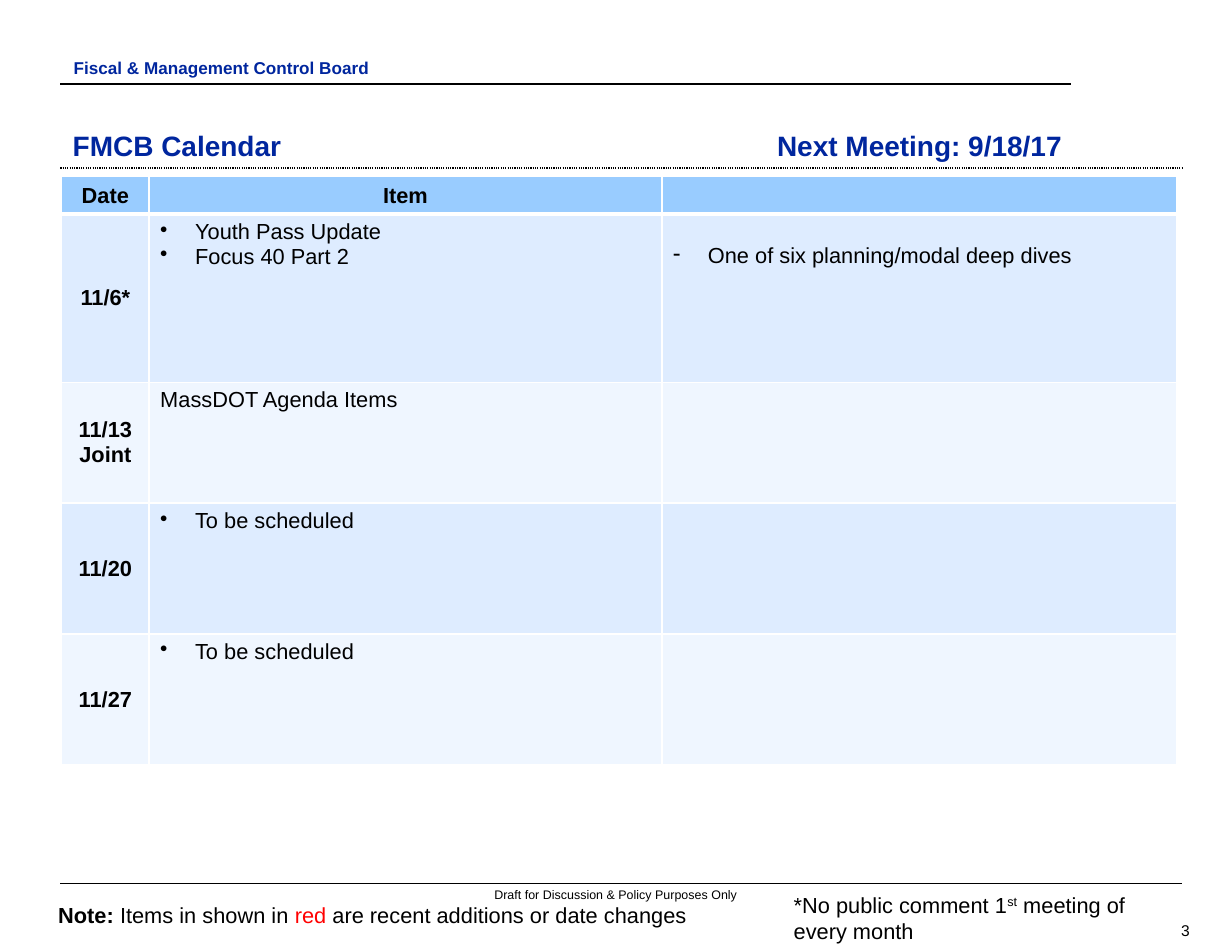
from lxml import etree
from pptx import Presentation
from pptx.dml.color import RGBColor
from pptx.enum import dml, shapes, text
from pptx.oxml import parse_xml
from pptx.oxml.ns import nsdecls, qn
from pptx.util import Cm, Pt

BLACK = RGBColor(0x00, 0x00, 0x00)
NAVY = RGBColor(0x00, 0x26, 0x9E)
RED = RGBColor(0xFF, 0x00, 0x00)
HEADER = RGBColor(0x99, 0xCC, 0xFF)
BAND_DARK = RGBColor(0xDE, 0xEC, 0xFF)
BAND_LIGHT = RGBColor(0xEF, 0xF6, 0xFF)
LEFT, CENTER, RIGHT = text.PP_ALIGN.LEFT, text.PP_ALIGN.CENTER, text.PP_ALIGN.RIGHT
TOP, MIDDLE, BOTTOM = text.MSO_ANCHOR.TOP, text.MSO_ANCHOR.MIDDLE, text.MSO_ANCHOR.BOTTOM

prs = Presentation()
prs.slide_width, prs.slide_height = Cm(27.94), Cm(21.59)
s = prs.slides.add_slide(prs.slide_layouts[6])


def style(r, size, color, bold):
    r.font.name = "Arial"
    r.font.size = Pt(size)
    r.font.color.rgb = color
    r.font.bold = bold


def add_text(box, runs, size, align=LEFT, anchor=TOP, wrap=True):
    tf = s.shapes.add_textbox(*[Cm(v) for v in box]).text_frame
    tf.word_wrap = wrap
    tf.vertical_anchor = anchor
    p = tf.paragraphs[0]
    p.alignment = align
    for words, color, bold in runs:
        r = p.add_run()
        r.text = words
        style(r, size, color, bold)
    return tf


for y, right, width, dash in [
    (1.9, 24.28, 1, None),
    (3.81, 26.8, 0.75, dml.MSO_LINE.ROUND_DOT),
    (20.04, 26.8, 0.75, None),
]:
    sp = s.shapes.add_connector(shapes.MSO_CONNECTOR.STRAIGHT, Cm(1.37), Cm(y), Cm(right), Cm(y))
    sp.line.color.rgb = BLACK
    sp.line.width = Pt(width)
    if dash:
        sp.line.dash_style = dash
    etree.SubElement(sp._element.spPr, qn("a:effectLst"))

add_text((24.89, 20.75, 2.34, 0.71), [("3", BLACK, False)], 10, RIGHT, MIDDLE)
tf = add_text((9.98, 20.12, 7.98, 0.33),
              [("Draft for Discussion & Policy Purposes Only", BLACK, False)], 8, CENTER)
tf.margin_left = tf.margin_right = tf.margin_top = tf.margin_bottom = 0

rows = [
    (0.84, "Date", "Item", "", None),
    (3.81, "11/6*", "Youth Pass Update\nFocus 40 Part 2", "One of six planning/modal deep dives", "•"),
    (2.74, "11/13 Joint", "MassDOT Agenda Items", "", None),
    (2.97, "11/20", "To be scheduled", "", "•"),
    (2.97, "11/27", "To be scheduled", "", "•"),
]
columns = [1.98, 11.63, 11.68]
table = s.shapes.add_table(len(rows), len(columns), Cm(1.4), Cm(4.01),
                           Cm(sum(columns)), Cm(sum(row[0] for row in rows))).table
for i, width in enumerate(columns):
    table.columns[i].width = Cm(width)

for i, (height, *words, bullet) in enumerate(rows):
    table.rows[i].height = Cm(height)
    for j, content in enumerate(words):
        cell = table.cell(i, j)
        heading = i == 0 or j == 0
        for side in "LRTB":
            thick = (i, side) in [(0, "B"), (1, "T")]
            cell._tc.get_or_add_tcPr().append(parse_xml(
                f'<a:ln{side} {nsdecls("a")} w="{Pt(3 if thick else 1)}"><a:solidFill>'
                f'<a:srgbClr val="FFFFFF"/></a:solidFill></a:ln{side}>'))
        cell.fill.solid()
        cell.fill.fore_color.rgb = HEADER if i == 0 else BAND_DARK if i % 2 else BAND_LIGHT
        cell.vertical_anchor = MIDDLE if heading else TOP
        cell.text_frame.text = content
        for p in cell.text_frame.paragraphs:
            p.alignment = CENTER if heading else LEFT
            if content and bullet and not heading:
                pPr = p._p.get_or_add_pPr()
                pPr.set("marL", str(Cm(0.79)))
                pPr.set("indent", str(-Cm(0.79)))
                etree.SubElement(pPr, qn("a:buChar")).set("char", bullet if j == 1 else "-")
            for r in p.runs:
                style(r, 14, BLACK, heading)
            if not content:
                p._p.get_or_add_endParaRPr().set("sz", "1400")
table.cell(1, 2).margin_top = Cm(0.68)

add_text((1.42, 1.17, 9.53, 0.71), [("Fiscal & Management Control Board", NAVY, True)], 11)
add_text((1.4, 1.93, 12.73, 1.88), [("FMCB Calendar", NAVY, True)], 18, LEFT, BOTTOM)
add_text((12.7, 1.98, 11.63, 1.83), [("Next Meeting: 9/18/17", NAVY, True)], 18, RIGHT, BOTTOM)
add_text((1.07, 20.32, 14.81, 0.86), [
    ("Note: ", BLACK, True),
    ("Items in shown in ", BLACK, False),
    ("red", RED, False),
    (" are recent additions or date changes", BLACK, False),
], 14, wrap=False)
tf = add_text((17.75, 20.09, 8.97, 1.45), [
    ("*No public comment 1", BLACK, False),
    ("st", BLACK, False),
    (" meeting of every month", BLACK, False),
], 14)
tf.paragraphs[0].runs[1].font._element.set("baseline", "30000")

prs.save("out.pptx")
